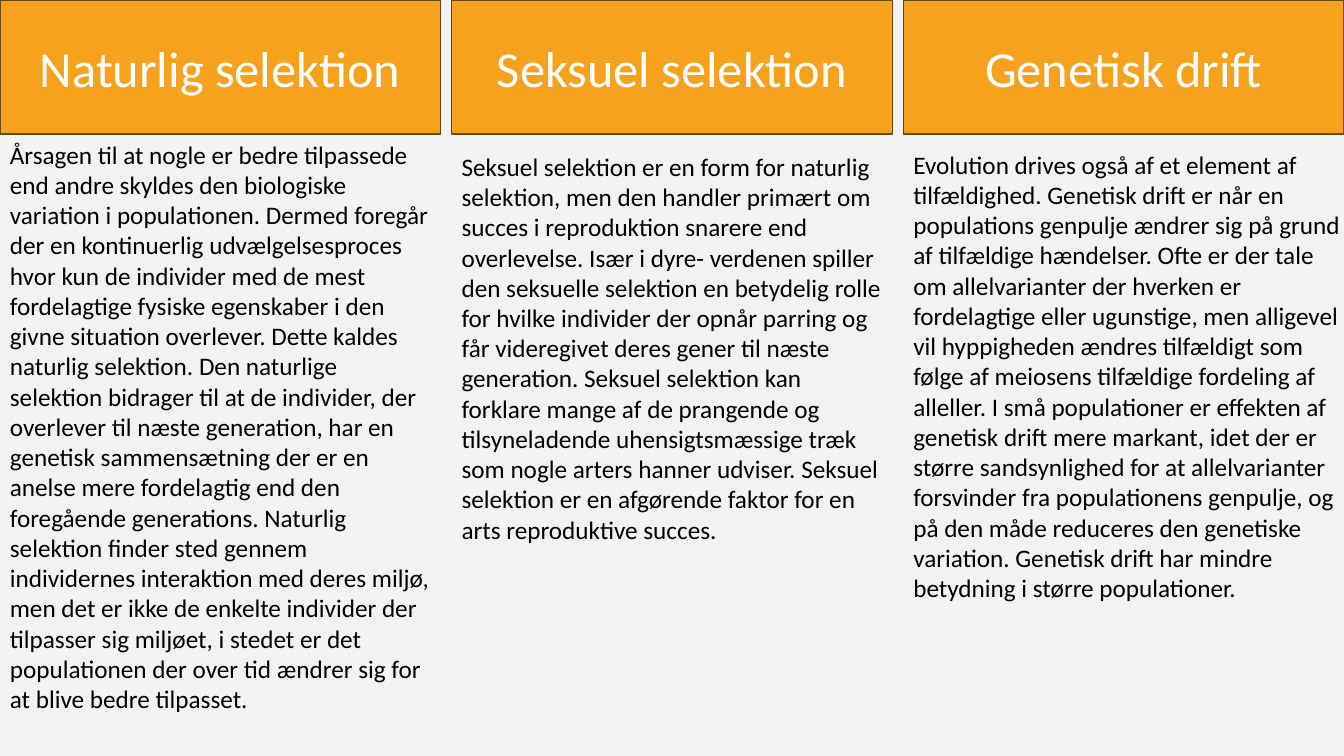
from dataclasses import dataclass

from pptx import Presentation
from pptx.dml.color import RGBColor
from pptx.enum.shapes import MSO_SHAPE
from pptx.enum.text import MSO_ANCHOR, MSO_AUTO_SIZE, PP_ALIGN
from pptx.shapes.autoshape import Shape
from pptx.slide import Slide
from pptx.util import Inches, Pt


@dataclass(frozen=True)
class Theme:
    font: str = "Calibri"
    background: RGBColor = RGBColor(0xF2, 0xF2, 0xF2)
    header_fill: RGBColor = RGBColor(0xF6, 0xA2, 0x1D)
    header_line: RGBColor = RGBColor(0x6C, 0x47, 0x0D)
    header_text: RGBColor = RGBColor(0xFF, 0xFF, 0xFF)
    body_text: RGBColor = RGBColor(0x00, 0x00, 0x00)
    header_size: int = 36
    body_size: int = 18


@dataclass(frozen=True)
class Mechanism:
    heading: str
    body: str
    body_top: float
    body_height: float
    extra_width: float = 0


THEME = Theme()

# Grid in inches: three equal columns with a narrow gutter
SLIDE_WIDTH, SLIDE_HEIGHT = 13.33, 7.5
GUTTER = 0.11
HEADER_HEIGHT = 1.33

# Column content
MECHANISMS = [
    Mechanism(
        "Naturlig selektion",
        "Årsagen til at nogle er bedre tilpassede end andre skyldes den biologiske "
        "variation i populationen. Dermed foregår der en kontinuerlig "
        "udvælgelsesproces hvor kun de individer med de mest fordelagtige fysiske "
        "egenskaber i den givne situation overlever. Dette kaldes naturlig "
        "selektion. Den naturlige selektion bidrager til at de individer, der "
        "overlever til næste generation, har en genetisk sammensætning der er en "
        "anelse mere fordelagtig end den foregående generations. Naturlig "
        "selektion ﬁnder sted gennem individernes interaktion med deres miljø, "
        "men det er ikke de enkelte individer der tilpasser sig miljøet, i stedet "
        "er det populationen der over tid ændrer sig for at blive bedre tilpasset.",
        body_top=1.33,
        body_height=5.86,
    ),
    Mechanism(
        "Seksuel selektion",
        "Seksuel selektion er en form for naturlig selektion, men den handler "
        "primært om succes i reproduktion snarere end overlevelse. Især i dyre- "
        "verdenen spiller den seksuelle selektion en betydelig rolle for hvilke "
        "individer der opnår parring og får videregivet deres gener til næste "
        "generation. Seksuel selektion kan forklare mange af de prangende og "
        "tilsyneladende uhensigtsmæssige træk som nogle arters hanner udviser. "
        "Seksuel selektion er en afgørende faktor for en arts reproduktive succes.",
        body_top=1.45,
        body_height=4.04,
    ),
    Mechanism(
        "Genetisk drift",
        "Evolution drives også af et element af tilfældighed. Genetisk drift er "
        "når en populations genpulje ændrer sig på grund af tilfældige hændelser. "
        "Ofte er der tale om allelvarianter der hverken er fordelagtige eller "
        "ugunstige, men alligevel vil hyppigheden ændres tilfældigt som følge af "
        "meiosens tilfældige fordeling af alleller. I små populationer er effekten "
        "af genetisk drift mere markant, idet der er større sandsynlighed for at "
        "allelvarianter forsvinder fra populationens genpulje, og på den måde "
        "reduceres den genetiske variation. Genetisk drift har mindre betydning i "
        "større populationer.",
        body_top=1.43,
        body_height=4.64,
        extra_width=GUTTER,
    ),
]
COLUMN_WIDTH = (SLIDE_WIDTH - GUTTER * (len(MECHANISMS) - 1)) / len(MECHANISMS)


def write_text(
    shape: Shape,
    text: str,
    *,
    size: int,
    color: RGBColor,
    align: PP_ALIGN = PP_ALIGN.LEFT,
    anchor: MSO_ANCHOR = MSO_ANCHOR.TOP,
    auto_size: MSO_AUTO_SIZE = MSO_AUTO_SIZE.NONE,
) -> None:
    frame = shape.text_frame
    frame.word_wrap = True
    frame.auto_size = auto_size
    frame.vertical_anchor = anchor
    paragraph = frame.paragraphs[0]
    paragraph.alignment = align
    run = paragraph.add_run()
    run.text = text
    run.font.name = THEME.font
    run.font.size = Pt(size)
    run.font.color.rgb = color


def add_header(slide: Slide, heading: str, left: float) -> None:
    header = slide.shapes.add_shape(
        MSO_SHAPE.RECTANGLE,
        Inches(left), 0, Inches(COLUMN_WIDTH), Inches(HEADER_HEIGHT),
    )
    header.shadow.inherit = False
    header.fill.solid()
    header.fill.fore_color.rgb = THEME.header_fill
    header.line.color.rgb = THEME.header_line
    header.line.width = Pt(1)
    write_text(
        header, heading, size=THEME.header_size, color=THEME.header_text,
        align=PP_ALIGN.CENTER, anchor=MSO_ANCHOR.MIDDLE,
    )


def add_body(slide: Slide, mechanism: Mechanism, left: float) -> None:
    body = slide.shapes.add_textbox(
        Inches(left), Inches(mechanism.body_top),
        Inches(COLUMN_WIDTH + mechanism.extra_width), Inches(mechanism.body_height),
    )
    write_text(
        body, mechanism.body, size=THEME.body_size, color=THEME.body_text,
        auto_size=MSO_AUTO_SIZE.SHAPE_TO_FIT_TEXT,
    )


def main() -> None:
    presentation = Presentation()
    presentation.slide_width = Inches(SLIDE_WIDTH)
    presentation.slide_height = Inches(SLIDE_HEIGHT)

    # Blank layout: the three headings share the top row
    slide = presentation.slides.add_slide(presentation.slide_layouts[6])
    slide.background.fill.solid()
    slide.background.fill.fore_color.rgb = THEME.background

    # One heading and explanation per column
    for column, mechanism in enumerate(MECHANISMS):
        left = column * (COLUMN_WIDTH + GUTTER)
        add_body(slide, mechanism, left)
        add_header(slide, mechanism.heading, left)

    presentation.save("out.pptx")


if __name__ == "__main__":
    main()
